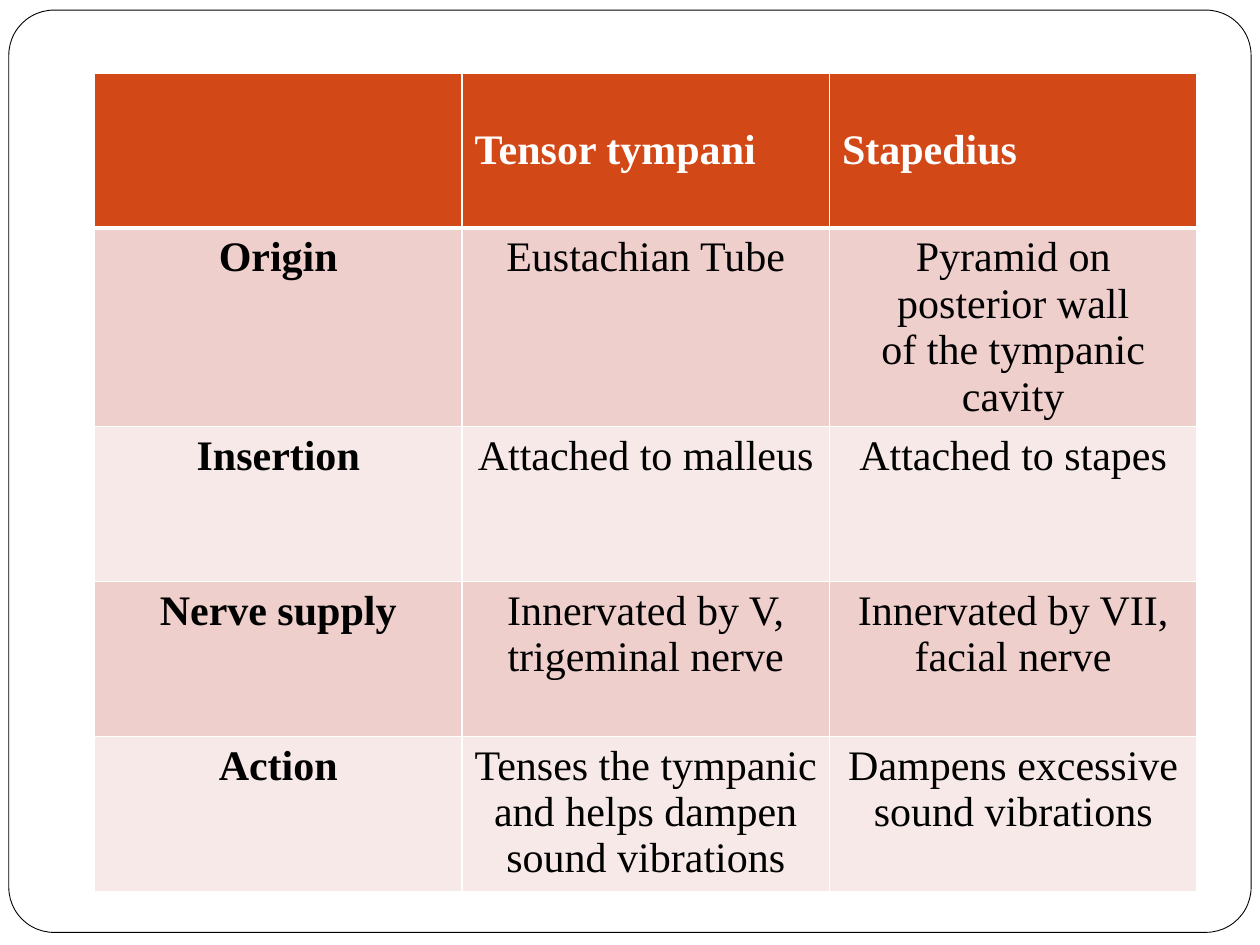
from lxml import etree
from pptx import Presentation
from pptx import util as u
from pptx.dml.color import RGBColor
from pptx.enum import shapes, text
from pptx.oxml.ns import qn

THEME = {
    "paper": RGBColor.from_string("FFFFFF"),
    "ink": RGBColor.from_string("000000"),
    "header": RGBColor.from_string("D34817"),
    "bands": [RGBColor.from_string("EFCFCC"), RGBColor.from_string("F7E9E8")],
    "font": "Times New Roman",
    "size": u.Pt(24),
    "rule": u.Pt(1),
    "header_rule": u.Pt(3),
    "frame_line": u.Pt(0.5),
}

MUSCLES = [
    ["", "Tensor tympani", "Stapedius"],
    ["Origin", "Eustachian Tube", "Pyramid on posterior wall\nof the tympanic cavity"],
    ["Insertion", "Attached to malleus", "Attached to stapes"],
    ["Nerve supply", "Innervated by V, trigeminal nerve", "Innervated by VII, facial nerve"],
    ["Action", "Tenses the tympanic and helps dampen sound vibrations",
     "Dampens excessive sound vibrations"],
]


def add_border(cell, side, width):
    """Draw one side (L, R, T or B) of a cell in the paper colour."""
    line = etree.SubElement(cell._tc.get_or_add_tcPr(), qn(f"a:ln{side}"), w=str(int(width)))
    fill = etree.SubElement(line, qn("a:solidFill"))
    etree.SubElement(fill, qn("a:srgbClr"), val=str(THEME["paper"]))


deck = Presentation()
deck.slide_width, deck.slide_height = u.Inches(10), u.Inches(7.5)
slide = deck.slides.add_slide(deck.slide_layouts[6])

# Rounded frame around the slide
frame = slide.shapes.add_shape(
    shapes.MSO_SHAPE.ROUNDED_RECTANGLE,
    u.Inches(0.07), u.Inches(0.08), u.Inches(9.86), u.Inches(7.32))
frame.adjustments[0] = 0.049
frame.shadow.inherit = False
frame.fill.solid()
frame.fill.fore_color.rgb = THEME["paper"]
frame.line.color.rgb = THEME["ink"]
frame.line.width = THEME["frame_line"]

# Comparison table: equal columns and equal rows
row_count, column_count = len(MUSCLES), len(MUSCLES[0])
table = slide.shapes.add_table(
    row_count, column_count,
    u.Inches(0.75), u.Inches(0.58), u.Inches(8.75), u.Inches(1.23 * row_count)).table

for r, entries in enumerate(MUSCLES):
    is_header = r == 0
    for c, entry in enumerate(entries):
        cell = table.cell(r, c)
        for side in "LRTB":
            under_header = (r, side) in [(0, "B"), (1, "T")]
            add_border(cell, side, THEME["header_rule" if under_header else "rule"])
        cell.fill.solid()
        cell.fill.fore_color.rgb = THEME["header"] if is_header else THEME["bands"][(r - 1) % 2]
        cell.vertical_anchor = text.MSO_ANCHOR.MIDDLE if is_header else text.MSO_ANCHOR.TOP
        cell.text = entry
        formats = {"name": THEME["font"], "size": THEME["size"], "bold": is_header or c == 0}
        for para in cell.text_frame.paragraphs:
            para.alignment = text.PP_ALIGN.LEFT if is_header else text.PP_ALIGN.CENTER
            for span in para.runs:
                for name, value in formats.items():
                    setattr(span.font, name, value)
                span.font.color.rgb = THEME["paper" if is_header else "ink"]

deck.save("out.pptx")
